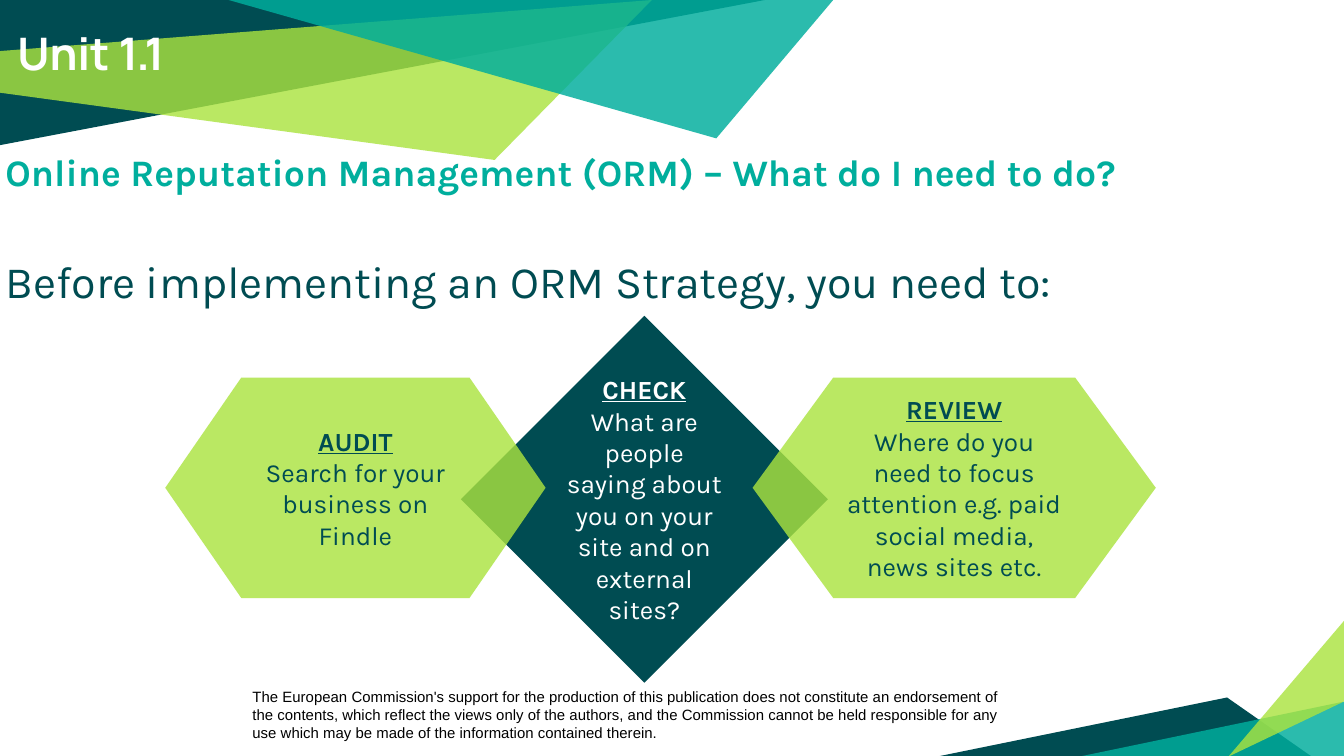
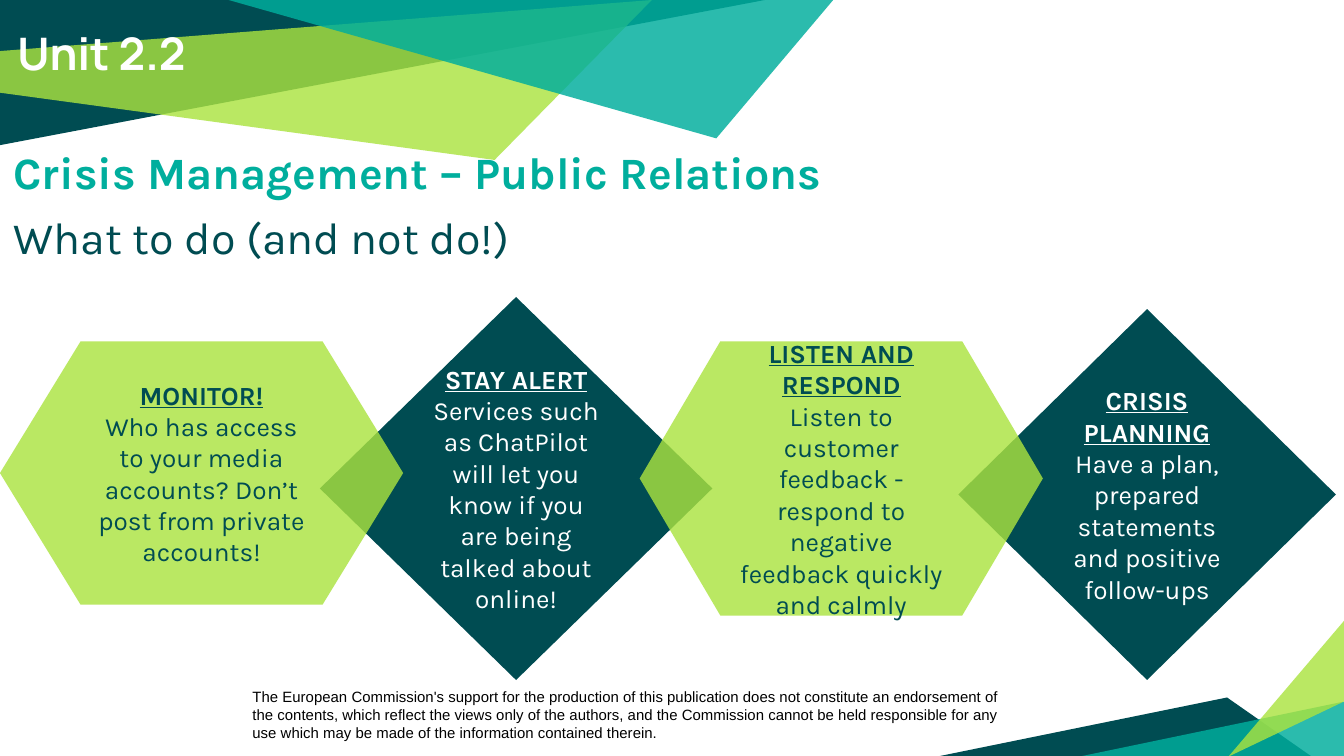
from dataclasses import dataclass

from pptx import Presentation
from pptx.dml.color import RGBColor
from pptx.enum.shapes import MSO_SHAPE
from pptx.enum.text import MSO_ANCHOR, MSO_AUTO_SIZE, PP_ALIGN
from pptx.oxml.ns import qn
from pptx.util import Pt

PX = 9144  # 100 px to the inch
DIAMOND = MSO_SHAPE.DIAMOND
HEXAGON = MSO_SHAPE.FLOWCHART_PREPARATION
TOP, MIDDLE = MSO_ANCHOR.TOP, MSO_ANCHOR.MIDDLE
LEFT, CENTER = PP_ALIGN.LEFT, PP_ALIGN.CENTER


@dataclass
class Theme:
    dark: str = "004C52"
    lime: str = "ABE33F"
    teal: str = "00AE9D"
    white: str = "FFFFFF"
    black: str = "000000"
    title_font: str = "Manrope"
    body_font: str = "Karla"
    note_font: str = "Arial"
    title_size: int = 24
    lead_size: int = 24
    card_size: int = 14
    note_size: int = 8
    inset: int = 10


theme = Theme()
OPACITY = {theme.dark: 100, theme.lime: 81, theme.teal: 83}

NOTE = (
    "The European Commission's support for the production of this publication "
    "does not constitute an endorsement of the contents, which reflect the views "
    "only of the authors, and the Commission cannot be held responsible for any "
    "use which may be made of the information contained therein."
)

# Decorative bands: colour and corner points
BANDS = [
    (theme.dark, [(0, 0), (0, 108), (569, 0)]),
    (theme.lime, [(0, 38), (0, 69), (368, 119), (485, 0)]),
    (theme.dark, [(697, 563), (976, 563), (913, 519)]),
    (theme.teal, [(1000, 522), (1000, 563), (803, 563)]),
    (theme.lime, [(1000, 522), (1000, 462), (914, 563)]),
    (theme.teal, [(170, 0), (533, 103), (620, 0)]),
]

# Each page: title, body box, body top inset, heading size, gap, and cards
PAGES = [
    {
        "title": "Unit 1.1",
        "body": (-6, 101, 1000, 302),
        "body_inset": 10,
        "heading": "Online Reputation Management (ORM) – What do I need to do?",
        "heading_size": 20,
        "lead": "Before implementing an ORM Strategy, you need to:",
        "lead_gap": 32,
        "cards": [
            (DIAMOND, (343, 235, 273, 273), "CHECK",
             "What are people saying about you on your site and on external sites?"),
            (HEXAGON, (123, 281, 283, 164), "AUDIT",
             "Search for your business on Findle"),
            (HEXAGON, (560, 281, 300, 164), "REVIEW",
             "Where do you need to focus attention e.g. paid social media, news sites etc."),
        ],
    },
    {
        "title": "Unit 2.2",
        "body": (0, 50, 1000, 302),
        "body_inset": 58,
        "heading": "Crisis Management – Public Relations",
        "heading_size": 24,
        "lead": "What to do (and not do!)",
        "lead_gap": 6,
        "cards": [
            (DIAMOND, (713, 230, 281, 276), "CRISIS PLANNING",
             "Have a plan, prepared statements and positive follow-ups"),
            (DIAMOND, (238, 221, 292, 285), "STAY ALERT",
             "Services such as ChatPilot will let you know if you are being talked about online!"),
            (HEXAGON, (0, 254, 300, 196), "MONITOR!",
             "Who has access to your media accounts? Don’t post from private accounts!"),
            (HEXAGON, (476, 254, 300, 204), "LISTEN AND RESPOND",
             "Listen to customer feedback - respond to negative feedback quickly and calmly"),
        ],
    },
]


def paint(shape, color):
    """Flat fill at the colour's opacity, without line or shadow."""
    shape.shadow.inherit = False
    shape.fill.solid()
    shape.fill.fore_color.rgb = RGBColor.from_string(color)
    if OPACITY[color] < 100:
        tint = shape._element.spPr.find(qn("a:solidFill")).find(qn("a:srgbClr"))
        alpha = tint.makeelement(qn("a:alpha"), {"val": str(OPACITY[color] * 1000)})
        tint.append(alpha)
    shape.line.fill.background()


def write(frame, lines, align, anchor, inset=theme.inset):
    """Fill a frame with lines of (text, font, size, colour, bold, underline, gap)."""
    frame.word_wrap = True
    frame.auto_size = MSO_AUTO_SIZE.NONE
    frame.vertical_anchor = anchor
    frame.margin_left = frame.margin_right = frame.margin_bottom = theme.inset * PX
    frame.margin_top = inset * PX
    for index, (text, font, size, color, bold, underline, gap) in enumerate(lines):
        para = frame.add_paragraph() if index else frame.paragraphs[0]
        para.text = text
        para.alignment = align
        para.space_before = Pt(gap)
        settings = para._p.get_or_add_pPr()
        settings.set("marL", "0")
        settings.set("indent", "0")
        settings.append(settings.makeelement(qn("a:buNone"), {}))
        para.font.name = font
        para.font.size = Pt(size)
        para.font.bold = bold
        para.font.underline = underline
        para.font.color.rgb = RGBColor.from_string(color)


deck = Presentation()
deck.slide_width = 1000 * PX
deck.slide_height = 5143500

for content in PAGES:
    page = deck.slides.add_slide(deck.slide_layouts[1])
    shapes = page.shapes
    title, body = page.placeholders

    # Funding note
    box = shapes.add_textbox(178 * PX, 507 * PX, 579 * PX, 50 * PX)
    box.text_frame.word_wrap = True
    para = box.text_frame.paragraphs[0]
    para.text = NOTE
    para.font.name = theme.note_font
    para.font.size = Pt(theme.note_size)
    para.font.color.rgb = RGBColor.from_string(theme.black)

    # Bands
    for color, points in BANDS:
        outline = shapes.build_freeform(*points[0], scale=PX)
        outline.add_line_segments(points[1:], close=True)
        paint(outline.convert_to_shape(), color)

    # Body and title, in front of the bands
    for holder, place in ((body, content["body"]), (title, (3, 9, 806, 60))):
        holder.left, holder.top, holder.width, holder.height = [n * PX for n in place]
        shapes._spTree.append(holder._element)
    write(body.text_frame, [
        (content["heading"], theme.body_font, content["heading_size"],
         theme.teal, True, False, 0),
        (content["lead"], theme.body_font, theme.lead_size,
         theme.dark, False, False, content["lead_gap"]),
    ], LEFT, TOP, content["body_inset"])
    write(title.text_frame, [
        (content["title"], theme.title_font, theme.title_size, theme.white, True, False, 0),
    ], LEFT, TOP)

    # Cards
    for kind, place, name, advice in content["cards"]:
        card = shapes.add_shape(kind, *[n * PX for n in place])
        fill, ink = (theme.dark, theme.white) if kind == DIAMOND else (theme.lime, theme.dark)
        paint(card, fill)
        write(card.text_frame, [
            (name, theme.body_font, theme.card_size, ink, True, True, 0),
            (advice, theme.body_font, theme.card_size, ink, False, False, 0),
        ], CENTER, MIDDLE)

deck.save("out.pptx")
